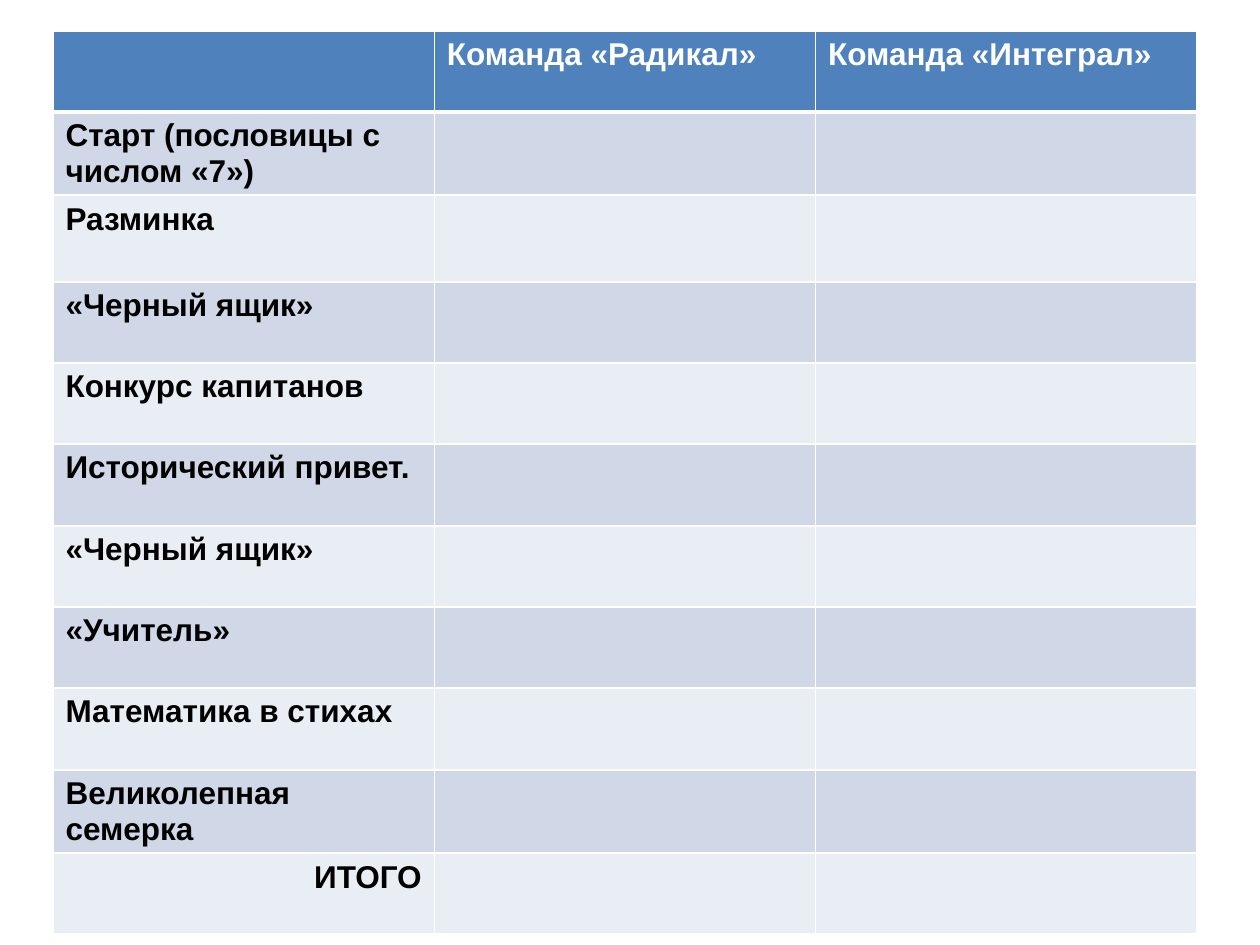
import pptx
import pptx.dml.color
import pptx.enum.text
import pptx.oxml
import pptx.oxml.ns
import pptx.util

PX = 914400 / 126
HEAD = ["", "Команда «Радикал»", "Команда «Интеграл»"]
ROUNDS = [
    "Старт (пословицы с числом «7»)",
    "Разминка",
    "«Черный ящик»",
    "Конкурс капитанов",
    "Исторический привет.",
    "«Черный ящик»",
    "«Учитель»",
    "Математика в стихах",
    "Великолепная семерка",
    "ИТОГО",
]
HEIGHTS = [81, 83, 87, 81, 81, 82, 81, 81, 82, 83, 81]
BLUE, DARK, LIGHT = "4F81BD", "D0D8E8", "E9EDF4"
WHITE, BLACK = "FFFFFF", "000000"


def px(num):
    return pptx.util.Emu(round(num * PX))


def rgb(code):
    return pptx.dml.color.RGBColor.from_string(code)


def edge(cell, side, width):
    """Draw one white border; width is in points."""
    line = pptx.oxml.parse_xml(
        f'<a:{side} {pptx.oxml.ns.nsdecls("a")} w="{width * 12700}">'
        f'<a:solidFill><a:srgbClr val="{WHITE}"/></a:solidFill></a:{side}>'
    )
    cell._tc.get_or_add_tcPr().append(line)


def style(cell, text, fill, ink, top, base):
    for side, width in {"lnL": 1, "lnR": 1, "lnT": top, "lnB": base}.items():
        edge(cell, side, width)
    cell.fill.solid()
    cell.fill.fore_color.rgb = rgb(fill)
    cell.text = text
    font = cell.text_frame.paragraphs[0].font
    look = {"name": "Arial", "size": pptx.util.Pt(18), "bold": True}
    for key, val in look.items():
        setattr(font, key, val)
    font.color.rgb = rgb(ink)


def scores(slide, left, top, width):
    """Place the score table: a header, then one row for each round."""
    rows = [HEAD] + [[name, "", ""] for name in ROUNDS]
    frame = slide.shapes.add_table(
        len(rows), len(HEAD), px(left), px(top), px(width), px(sum(HEIGHTS))
    )
    table = frame.table
    for col in table.columns:
        col.width = px(width / len(HEAD))
    for i, (texts, high) in enumerate(zip(rows, HEIGHTS)):
        table.rows[i].height = px(high)
        fill = BLUE if i == 0 else DARK if i % 2 else LIGHT
        ink = BLACK if i else WHITE
        for j, text in enumerate(texts):
            style(table.cell(i, j), text, fill, ink,
                  3 if i == 1 else 1, 3 if i == 0 else 1)
    total = table.cell(len(ROUNDS), 0).text_frame.paragraphs[0]
    total.alignment = pptx.enum.text.PP_ALIGN.RIGHT


def main():
    deck = pptx.Presentation()
    deck.slide_width, deck.slide_height = px(1260), px(945)
    slide = deck.slides.add_slide(deck.slide_layouts[6])
    scores(slide, 53, 31, 1144)
    deck.save("out.pptx")


if __name__ == "__main__":
    main()
